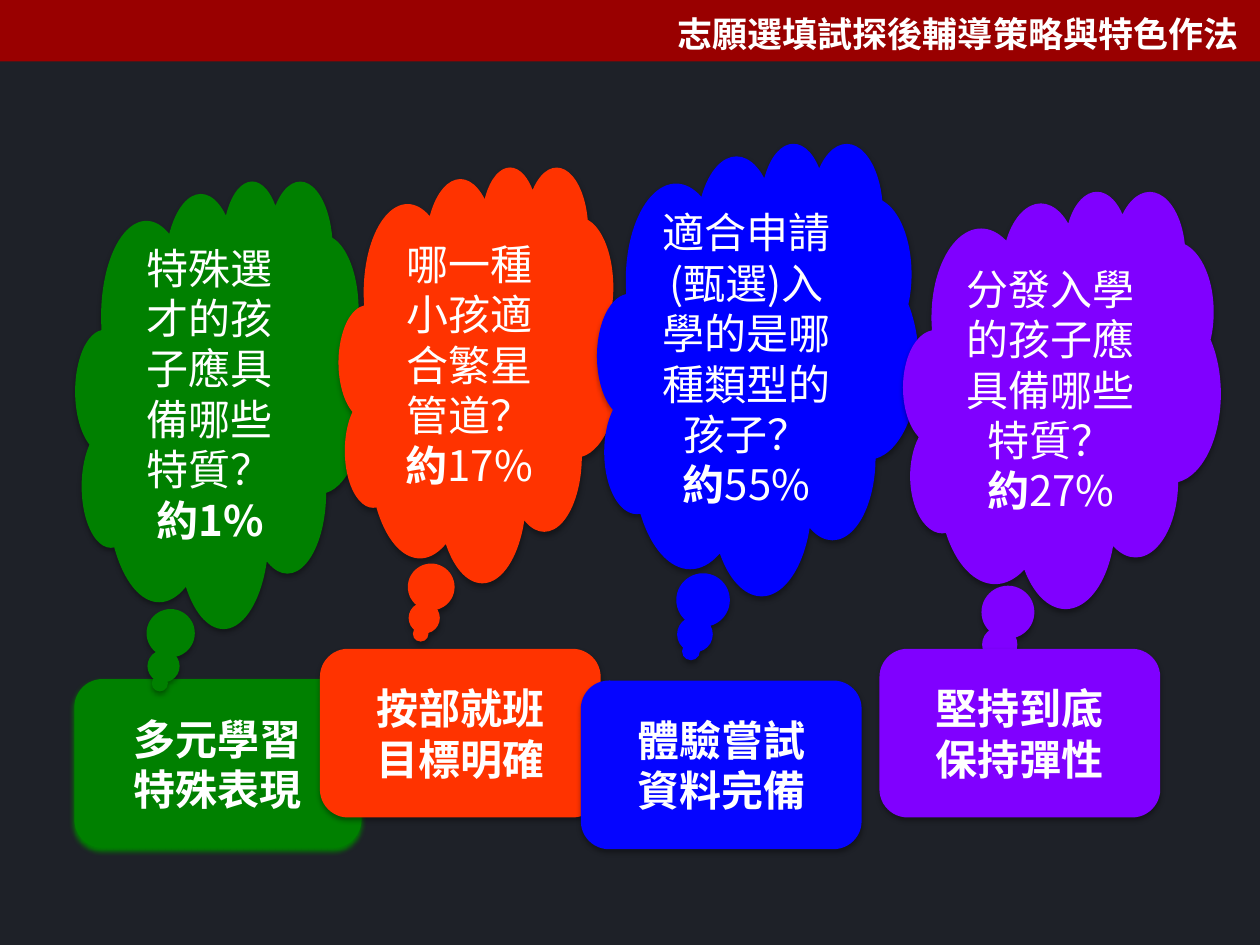
from lxml.etree import SubElement
from pptx import Presentation
from pptx.dml.color import RGBColor
from pptx.enum.shapes import MSO_SHAPE as Shape
from pptx.enum.text import MSO_ANCHOR as Anchor, MSO_AUTO_SIZE as AutoSize, PP_ALIGN as Align
from pptx.oxml.ns import qn
from pptx.util import Cm, Pt


def color(value):
    return RGBColor.from_string(value)


class Deck:
    font = "Noto Sans CJK SC"
    ink = "FFFFFF"

    def __init__(self, width, height, background):
        self.prs = Presentation()
        self.prs.slide_width, self.prs.slide_height = Cm(width), Cm(height)
        self.s = self.prs.slides.add_slide(self.prs.slide_layouts[6])
        fill = self.s.background.fill
        fill.solid()
        fill.fore_color.rgb = color(background)

    def shape(self, kind, at, fill):
        sp = self.s.shapes.add_shape(kind, *map(Cm, at))
        sp.shadow.inherit = False
        sp.fill.solid()
        sp.fill.fore_color.rgb = color(fill)
        sp.line.fill.background()
        return sp

    def shadow(self, sp, value, opacity):
        effects = sp._element.spPr.find(qn("a:effectLst"))
        outer = SubElement(effects, qn("a:outerShdw"), blurRad=str(Pt(3.1)),
                           dist=str(Pt(1.8)), dir="5400000", rotWithShape="0")
        clr = SubElement(outer, qn("a:srgbClr"), val=value)
        SubElement(clr, qn("a:alpha"), val=str(opacity * 1000))

    def add_text(self, tf, paragraphs, size, align):
        tf.word_wrap = True
        for i, runs in enumerate(paragraphs):
            p = tf.paragraphs[0] if i == 0 else tf.add_paragraph()
            p.alignment = align
            for text, bold in runs:
                r = p.add_run()
                r.text = text
                r.font.size, r.font.bold = Pt(size), bold
                r.font.name = self.font
                r.font.color.rgb = color(self.ink)
                SubElement(r.font._element, qn("a:ea"), typeface=self.font)

    def bubble(self, kind, at, fill, paragraphs, shadow=("000000", 35)):
        sp = self.shape(kind, at, fill)
        self.shadow(sp, *shadow)
        sp.text_frame.vertical_anchor = Anchor.MIDDLE
        self.add_text(sp.text_frame, paragraphs, 24, Align.CENTER)

    def cloud(self, at, fill, question, *share):
        self.bubble(Shape.CLOUD_CALLOUT, at, fill, [[(question, False)], share])

    def card(self, at, fill, *lines, **style):
        self.bubble(Shape.ROUNDED_RECTANGLE, at, fill, [[(t, True)] for t in lines], **style)

    def title(self, at, text):
        tf = self.s.shapes.add_textbox(*map(Cm, at)).text_frame
        self.add_text(tf, [[(text, True)]], 20, Align.LEFT)
        tf.auto_size = AutoSize.SHAPE_TO_FIT_TEXT


def main():
    green, orange, blue, purple = "008000", "FF3300", "0000FF", "8000FF"
    card_w, card_h = 5.66, 3.4
    about = ("約", True)
    deck = Deck(25.4, 19.05, "1E2128")

    deck.card((1.5, 13.69, 5.79, card_h), green, "多元學習", "特殊表現", shadow=(green, 100))
    deck.cloud((1.52, 3.63, 5.84, 9.02), green, "特殊選才的孩子應具備哪些特質？", ("約1%", True))

    deck.cloud((6.83, 3.35, 5.66, 8.38), orange, "哪一種小孩適合繁星管道？", about, ("17%", False))
    deck.card((6.45, 13.08, card_w, card_h), orange, "按部就班", "目標明確")

    deck.cloud((12.04, 2.87, 6.48, 9.12), blue, "適合申請(甄選)入學的是哪種類型的孩子？",
               about, ("55%", False))
    deck.card((11.71, 13.72, card_w, card_h), "0505FF", "體驗嘗試", "資料完備")

    deck.cloud((18.21, 3.84, 6.4, 8.41), purple, "分發入學的孩子應具備哪些特質？",
               about, ("27%", False))
    deck.card((17.73, 13.08, card_w, card_h), purple, "堅持到底", "保持彈性")

    deck.shape(Shape.RECTANGLE, (0, 0, 25.4, 1.24), "990000")
    deck.title((13.41, 0.13, 12.09, 1.12), "志願選填試探後輔導策略與特色作法")
    deck.prs.save("out.pptx")


if __name__ == "__main__":
    main()
